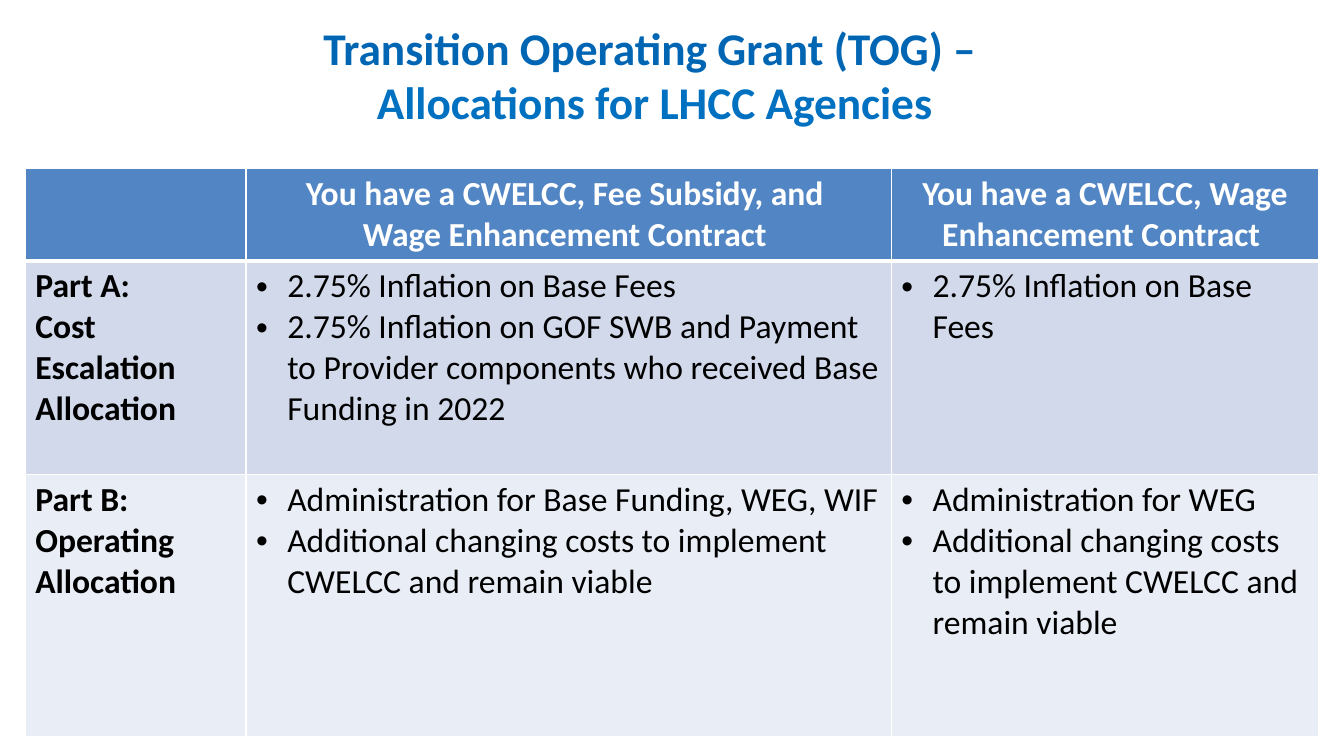
from lxml.etree import SubElement
from pptx import Presentation
from pptx.dml.color import RGBColor
from pptx.enum.text import MSO_ANCHOR as Anchor, PP_ALIGN as Align
from pptx.oxml import parse_xml
from pptx.oxml.ns import nsdecls, qn
from pptx.util import Emu, Inches, Pt

FONT = "Calibri"
TITLE = [("Transition Operating Grant (TOG) – ", "0066B3"),
         ("Allocations for LHCC Agencies", "0070C0")]
COSTS = "Additional changing costs to implement CWELCC and remain viable"
ROWS = [
    ([],
     ["You have a CWELCC, Fee Subsidy, and ", "Wage Enhancement Contract "],
     ["You have a CWELCC, Wage Enhancement Contract "]),
    (["Part A:\u00a0", "Cost Escalation Allocation"],
     ["2.75% Inflation on Base Fees",
      "2.75% Inflation on GOF SWB and Payment to Provider components "
      "who received Base Funding in 2022"],
     ["2.75% Inflation on Base Fees"]),
    (["Part B: Operating Allocation"],
     ["Administration for Base Funding, WEG, WIF", COSTS],
     ["Administration for WEG", COSTS]),
]
FILLS = ["5285C4", "D1D9EA", "E9EDF5"]
COLS = [2.19, 6.4, 4.24]
HEIGHTS = [0.92, 2.12, 2.6]
TITLE_BOX = (0.08, 0.28, sum(COLS), 0.96)
TABLE_BOX = (0.25, 1.67, sum(COLS), sum(HEIGHTS))
INDENT = Inches(0.31)


def rgb(value):
    """Turn a hex string into a colour."""
    return RGBColor.from_string(value)


def style(p, size, color, bold, align):
    """Format a paragraph and its runs."""
    p.alignment = align
    for r in p.runs:
        r.font.name, r.font.size, r.font.bold = FONT, Pt(size), bold
        r.font.color.rgb = rgb(color)


def add_bullet(p):
    """Give a paragraph a hanging bullet."""
    pPr = p._p.get_or_add_pPr()
    pPr.set("marL", str(INDENT))
    pPr.set("indent", str(-INDENT))
    SubElement(pPr, qn("a:buFont")).set("typeface", "Arial")
    SubElement(pPr, qn("a:buChar")).set("char", "•")


def add_borders(cell, bottom):
    """Draw white cell borders with the given bottom width."""
    widths = {"L": 1, "R": 1, "T": 1, "B": bottom}
    for i, (side, width) in enumerate(widths.items()):
        cell._tc.get_or_add_tcPr().insert(i, parse_xml(
            f'<a:ln{side} {nsdecls("a")} w="{Pt(width)}"><a:solidFill>'
            f'<a:srgbClr val="FFFFFF"/></a:solidFill></a:ln{side}>'))


def add_title(s):
    """Place and format the title."""
    sp = s.shapes.title
    sp.left, sp.top, sp.width, sp.height = map(Inches, TITLE_BOX)
    tf = sp.text_frame
    tf.text = "\n".join(text for text, _ in TITLE)
    tf.vertical_anchor = Anchor.MIDDLE
    for p, (_, color) in zip(tf.paragraphs, TITLE):
        style(p, 32.4, color, True, Align.CENTER)
        p.line_spacing = 0.98


def add_allocations(s):
    """Add the allocation table."""
    table = s.shapes.add_table(len(ROWS), len(COLS), *map(Inches, TABLE_BOX)).table
    for col, width in zip(table.columns, COLS):
        col.width = Inches(width)
    for row, height in zip(table.rows, HEIGHTS):
        row.height = Inches(height)
    for i, row in enumerate(ROWS):
        header = i == 0
        for j, lines in enumerate(row):
            cell = table.cell(i, j)
            cell.fill.solid()
            cell.fill.fore_color.rgb = rgb(FILLS[i])
            add_borders(cell, 3 if header else 1)
            cell.text_frame.text = "\n".join(lines)
            for p in cell.text_frame.paragraphs:
                style(p, 24, "FFFFFF" if header else "000000",
                      header or j == 0, Align.CENTER if header else Align.LEFT)
                if not header and j > 0:
                    add_bullet(p)


def main():
    """Build and save the slide."""
    prs = Presentation()
    prs.slide_width, prs.slide_height = Inches(13.33), Inches(7.5)
    s = prs.slides.add_slide(prs.slide_layouts[5])
    add_title(s)
    add_allocations(s)
    prs.save("out.pptx")


if __name__ == "__main__":
    main()
